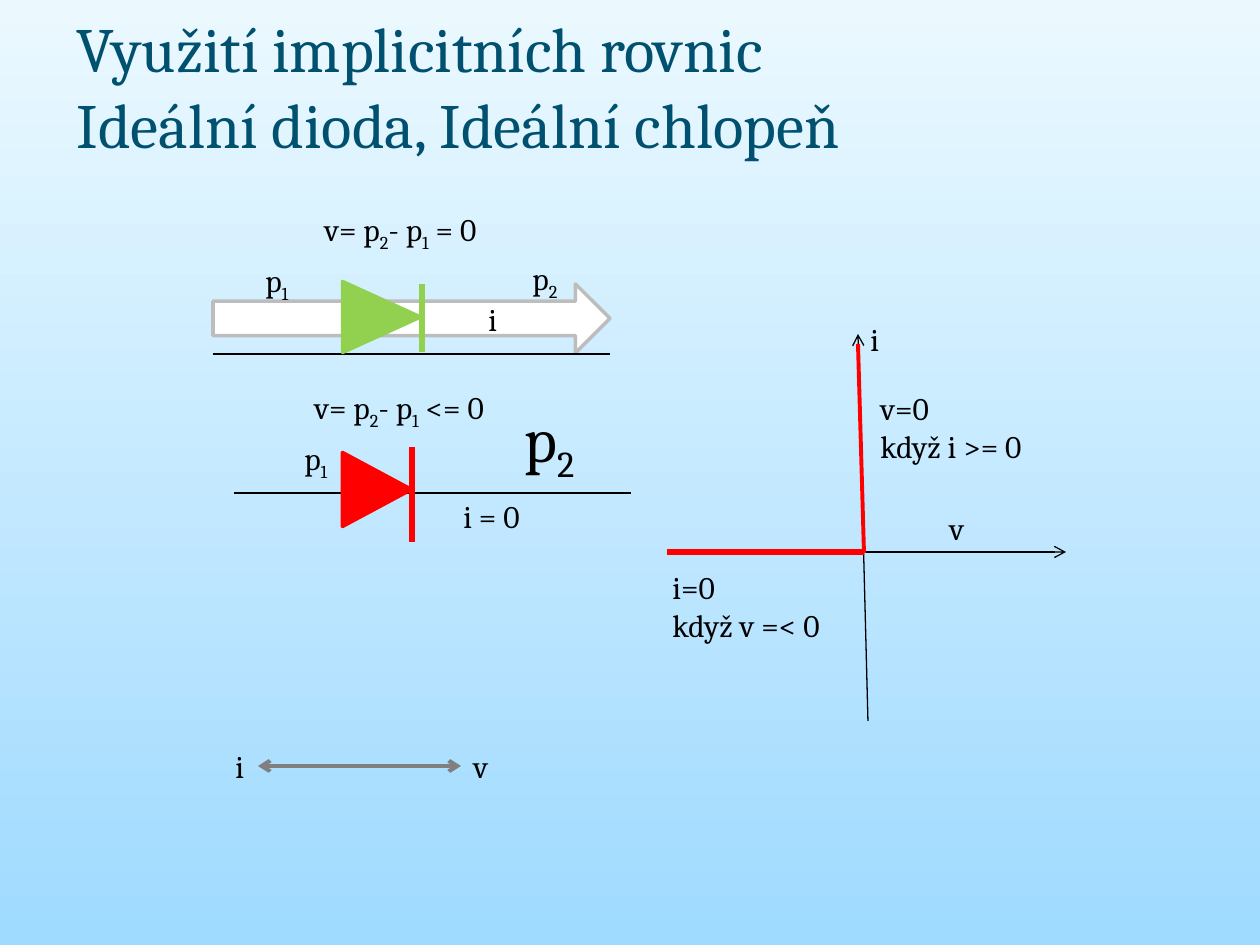
from dataclasses import dataclass

from lxml import etree
from pptx import Presentation
from pptx.dml.color import RGBColor
from pptx.enum.shapes import MSO_CONNECTOR, MSO_SHAPE
from pptx.enum.text import MSO_ANCHOR, MSO_AUTO_SIZE, PP_ALIGN
from pptx.oxml.ns import qn
from pptx.util import Emu, Pt

STRAIGHT = MSO_CONNECTOR.STRAIGHT
RIGHT_ARROW = MSO_SHAPE.RIGHT_ARROW
TRIANGLE = MSO_SHAPE.ISOSCELES_TRIANGLE
MIDDLE = MSO_ANCHOR.MIDDLE
LEFT = PP_ALIGN.LEFT
FIXED_SIZE = MSO_AUTO_SIZE.NONE
EMU_PER_PX = 914400 / 126


@dataclass(frozen=True)
class Theme:
    font: str = "Cambria"
    title: str = "005070"
    ink: str = "000000"
    conducting: str = "92D050"
    blocking: str = "FF0000"
    flow: str = "FFFFFF"
    flow_edge: str = "BDBDBD"
    exchange: str = "808080"
    sky_top: str = "EBF9FF"
    sky_bottom: str = "9FDAFF"
    title_size: int = 36
    text_size: int = 18
    thin: float = 0.75
    outline: float = 2
    medium: float = 2.25
    thick: float = 3


THEME = Theme()


def px(length):
    return Emu(round(length * EMU_PER_PX))


def rgb(colour):
    return RGBColor.from_string(colour)


def format_run(run, size, colour):
    run.font.name = THEME.font
    run.font.size = Pt(size)
    run.font.color.rgb = rgb(colour)


class Region:
    def __init__(self, slide, left, top):
        self.shapes = slide.shapes
        self.left = left
        self.top = top

    def at(self, x, y):
        return px(self.left + x), px(self.top + y)

    def label(self, text, x, y, width, height=50, size=THEME.text_size, wrap=False):
        """Parts between bars alternate between normal text and subscript."""
        frame = self.shapes.add_textbox(*self.at(x, y), px(width), px(height)).text_frame
        frame.word_wrap = wrap
        for index, row in enumerate(text.split("\n")):
            paragraph = frame.add_paragraph() if index else frame.paragraphs[0]
            for position, part in enumerate(row.split("|")):
                run = paragraph.add_run()
                run.text = part
                format_run(run, size, THEME.ink)
                if position % 2:
                    run.font._element.set("baseline", "-25000")

    def line(self, start, end, colour=THEME.ink, weight=THEME.thin, arrows=()):
        connector = self.shapes.add_connector(STRAIGHT, *self.at(*start), *self.at(*end))
        connector.line.color.rgb = rgb(colour)
        connector.line.width = Pt(weight)
        outline = connector.line._get_or_add_ln()
        for arrow in arrows:
            etree.SubElement(outline, qn(f"a:{arrow}"), type="arrow")
        etree.SubElement(connector._element.spPr, qn("a:effectLst"))

    def solid(self, kind, x, y, width, height, fill, edge, rotation=0):
        shape = self.shapes.add_shape(kind, *self.at(x, y), px(width), px(height))
        shape.rotation = rotation
        shape.shadow.inherit = False
        shape.fill.solid()
        shape.fill.fore_color.rgb = rgb(fill)
        shape.line.color.rgb = rgb(edge)
        shape.line.width = Pt(THEME.outline)


def paint_background(slide):
    fill = slide.background.fill
    fill.gradient()
    fill.gradient_angle = 270
    for stop, colour, position in zip(
        fill.gradient_stops, (THEME.sky_top, THEME.sky_bottom), (0, 1)
    ):
        stop.color.rgb = rgb(colour)
        stop.position = position


def place_title(slide, left, top, width, height):
    title = slide.shapes.title
    title.left, title.top, title.width, title.height = map(px, (left, top, width, height))
    frame = title.text_frame
    frame.text = "Využití implicitních rovnic \vIdeální dioda, Ideální chlopeň"
    frame.vertical_anchor = MIDDLE
    frame.auto_size = FIXED_SIZE
    frame.paragraphs[0].alignment = LEFT
    for run in frame.paragraphs[0].runs:
        format_run(run, THEME.title_size, THEME.title)


def draw_conducting_diode(slide, left, top):
    region = Region(slide, left, top)
    green = THEME.conducting
    region.solid(RIGHT_ARROW, 0, 80, 397, 69, THEME.flow, THEME.flow_edge)
    region.label("p|1", 40, 51, 53)
    region.label("p|2", 307, 49, 55)
    region.line((0, 150), (397, 150))
    region.label("i", 263, 90, 35)
    region.line((209, 80), (209, 148), green, THEME.thick)
    region.solid(TRIANGLE, 133, 74, 71, 78, green, green, 90)
    region.label("v= p|2|- p|1| = 0", 99, 0, 204)


def draw_blocking_diode(slide, left, top):
    region = Region(slide, left, top)
    red = THEME.blocking
    region.line((0, 111), (397, 111))
    region.label("p|1", 58, 51, 53)
    region.label("p|2", 278, 11, 86, 90, THEME.title_size)
    region.line((178, 65), (178, 160), red, THEME.thick)
    region.solid(TRIANGLE, 106, 73, 74, 69, red, red, 90)
    region.label("i = 0", 217, 109, 91)
    region.label("v= p|2|- p|1| <= 0", 68, 0, 224)


def draw_characteristic(slide, left, top):
    region = Region(slide, left, top)
    region.line((191, 20), (201, 407), arrows=("headEnd",))
    region.line((2, 238), (399, 238), arrows=("tailEnd",))
    region.line((0, 238), (197, 238), THEME.blocking, THEME.thick)
    region.line((197, 239), (191, 30), THEME.blocking, THEME.medium)
    region.label("i", 191, 0, 69, wrap=True)
    region.label("v", 270, 189, 69, wrap=True)
    region.label("i=0\nkdyž v =< 0", -7, 248, 208, 90, wrap=True)
    region.label("v=0\nkdyž i >= 0", 201, 69, 208, 90, wrap=True)


def draw_exchange(slide, left, top):
    region = Region(slide, left, top)
    region.label("i", 0, 0, 35)
    region.label("v", 238, 0, 42)
    region.line((238, 25), (35, 25), THEME.exchange, THEME.medium, ("headEnd", "tailEnd"))


def main():
    presentation = Presentation()
    presentation.slide_width = px(1260)
    presentation.slide_height = px(945)
    slide = presentation.slides.add_slide(presentation.slide_layouts[5])
    paint_background(slide)
    place_title(slide, 64, 16, 1133, 139)
    draw_conducting_diode(slide, 213, 204)
    draw_characteristic(slide, 667, 314)
    draw_exchange(slide, 223, 741)
    draw_blocking_diode(slide, 234, 382)
    presentation.save("out.pptx")


if __name__ == "__main__":
    main()
